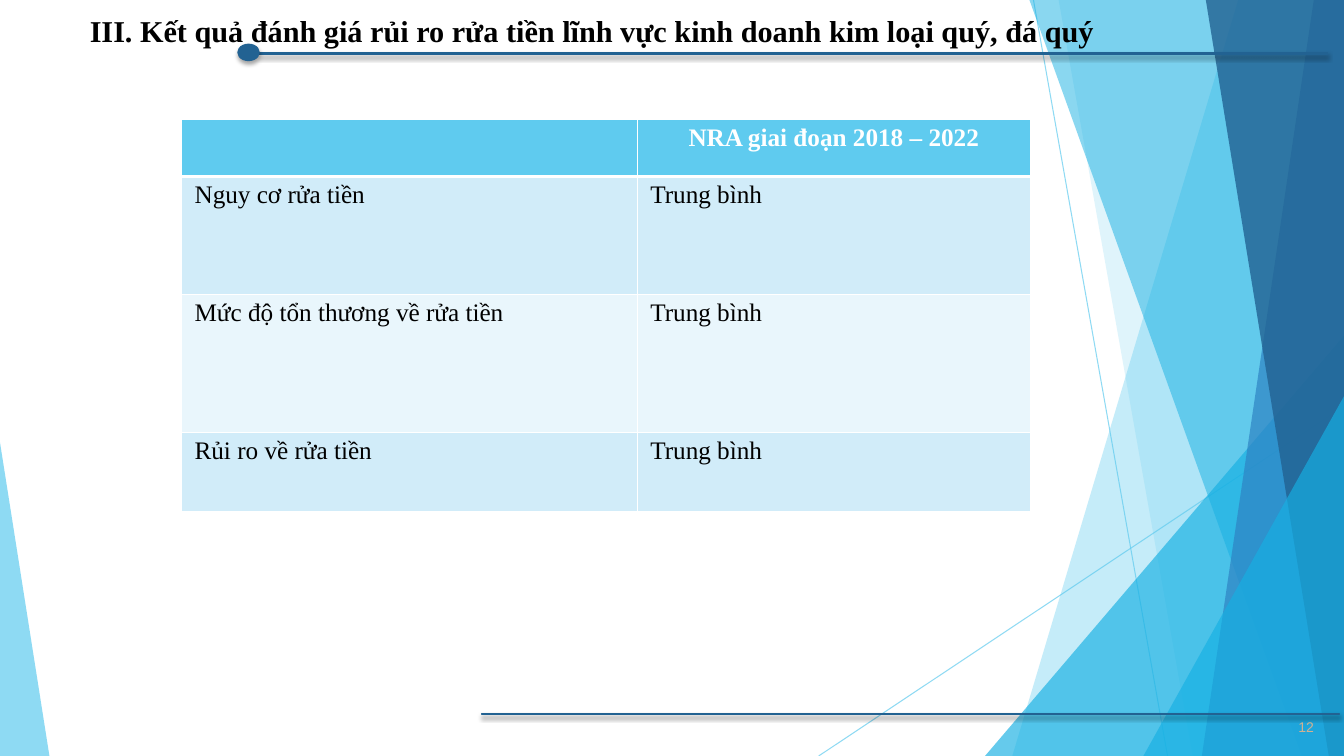
from lxml.etree import SubElement
from pptx import Presentation
from pptx.dml.color import RGBColor
from pptx.enum.shapes import MSO_CONNECTOR, MSO_SHAPE
from pptx.enum.text import MSO_ANCHOR, MSO_AUTO_SIZE, PP_ALIGN
from pptx.oxml import parse_xml
from pptx.oxml.ns import nsdecls, qn
from pptx.util import Inches, Pt

HUES = {"sky": "5FCBEF", "cyan": "16B0E3", "blue": "2E83C3", "navy": "226292",
        "white": "FFFFFF", "black": "000000", "tan": "D2B191",
        "odd": "D1ECF9", "even": "E9F6FC"}
SERIF = "Times New Roman"
ROWS = [("", "NRA giai đoạn 2018 – 2022"),
        ("Nguy cơ rửa tiền", "Trung bình"),
        ("Mức độ tổn thương về rửa tiền", "Trung bình"),
        ("Rủi ro về rửa tiền", "Trung bình")]


def tint(fill, hue, alpha=100):
    """Give a fill a solid colour with an opacity in percent."""
    fill.solid()
    fill.fore_color.rgb = RGBColor.from_string(HUES[hue])
    if alpha < 100:
        color = fill._xPr.find(qn("a:solidFill"))[0]
        SubElement(color, qn("a:alpha"), val=str(alpha * 1000))


def write(para, text, size, hue, face=SERIF, bold=False):
    """Add one formatted run to a paragraph."""
    run = para.add_run()
    run.text = text
    run.font.size, run.font.name, run.font.bold = Pt(size), face, bold
    run.font.color.rgb = RGBColor.from_string(HUES[hue])


def ray(slide, start, end):
    """Draw a thin translucent line."""
    line = slide.shapes.add_connector(
        MSO_CONNECTOR.STRAIGHT, *map(Inches, start + end))
    tint(line.line.fill, "sky", 70)
    line.line.width = Pt(0.75)
    SubElement(line._element.spPr, qn("a:effectLst"))


def sheet(slide, right, top, high, head, foot, hue, alpha):
    """Draw a slanted sheet that fills up to the right edge."""
    points = [(Inches(a), Inches(b)) for a, b in (
        (right - head, top), (right, top),
        (right, top + high), (right - foot, top + high))]
    pen = slide.shapes.build_freeform(*points[0])
    pen.add_line_segments(points[1:], close=True)
    shape = pen.convert_to_shape()
    shape.shadow.inherit = False
    tint(shape.fill, hue, alpha)
    shape.line.fill.background()


def wedge(slide, left, base, wide, high, peak, hue, alpha):
    """Draw a right triangle that stands on the base."""
    shape = slide.shapes.add_shape(
        MSO_SHAPE.ISOSCELES_TRIANGLE,
        *map(Inches, (left, base - high, wide, high)))
    shape.adjustments[0] = peak
    shape.shadow.inherit = False
    tint(shape.fill, hue, alpha)
    shape.line.fill.background()


def facets(slide, left, top, wide, high):
    """Draw the layered facets along both edges of the box."""
    right, base = left + wide, top + high
    ray(slide, (right - 3.08, top), (right - 1.75, base))
    ray(slide, (right, top + 4.03), (right - 5.21, base))
    for form, first, second, hue, alpha in (
            ("sheet", 1.05, 3.29, "sky", 36),
            ("sheet", 2.83, 1.5, "sky", 20),
            ("wedge", 3.56, 4.17, "cyan", 66),
            ("sheet", 3.12, 0.42, "cyan", 50),
            ("sheet", 0.3, 1.41, "blue", 70),
            ("sheet", 1.37, 0.15, "navy", 80),
            ("wedge", 1.99, 3.57, "cyan", 66)):
        if form == "sheet":
            sheet(slide, right, top, high, first, second, hue, alpha)
        else:
            wedge(slide, right - first, base, first, second, 1, hue, alpha)
    wedge(slide, left, base, 0.49, 3.11, 0, "sky", 70)


def rule(slide, kind, *box):
    """Draw a navy shape with a soft shadow below it."""
    shape = slide.shapes.add_shape(kind, *map(Inches, box))
    tint(shape.fill, "navy")
    tint(shape.line.fill, "navy")
    shape.line.width = Pt(1)
    shape.shadow.inherit = False
    glow = SubElement(
        shape._element.spPr.find(qn("a:effectLst")), qn("a:outerShdw"),
        blurRad=str(Pt(3)), dist=str(Pt(2)), dir="5400000", rotWithShape="0")
    color = SubElement(glow, qn("a:srgbClr"), val=HUES["black"])
    SubElement(color, qn("a:alpha"), val="35000")


def header(slide, left, top, wide, high):
    """Place the title and the dotted rule under it."""
    rule(slide, MSO_SHAPE.RECTANGLE, left + 1.78, top + 0.46, 10.6, 0.02)
    rule(slide, MSO_SHAPE.OVAL, left + 1.57, top + 0.38, 0.21, 0.16)
    title = slide.shapes.title
    title.left, title.top = Inches(left), Inches(top)
    title.width, title.height = Inches(wide), Inches(high)
    slide.shapes._spTree.append(title._element)
    frame = title.text_frame
    frame.auto_size = MSO_AUTO_SIZE.NONE
    frame.vertical_anchor = MSO_ANCHOR.MIDDLE
    para = frame.paragraphs[0]
    para.alignment = PP_ALIGN.LEFT
    write(para, "III. Kết quả đánh giá rủi ro rửa tiền lĩnh vực "
          "kinh doanh kim loại quý, đá quý", 21.6, "black", bold=True)


def footer(slide, left, top, wide):
    """Place the bottom rule and the page number."""
    rule(slide, MSO_SHAPE.RECTANGLE, left, top, wide, 0.01)
    box = slide.shapes.add_textbox(
        *map(Inches, (left + 8, top, 0.55, 0.27)))
    box.text_frame.word_wrap = True
    write(box.text_frame.paragraphs[0], "12", 10, "tan", "Arial")


def edge(cell, row):
    """Give a cell white borders, thick under the header."""
    sides = {"lnL": 1, "lnR": 1, "lnT": 3 if row == 1 else 1,
             "lnB": 3 if row == 0 else 1}
    props = cell._tc.get_or_add_tcPr()
    for place, (side, width) in enumerate(sides.items()):
        props.insert(place, parse_xml(
            f'<a:{side} {nsdecls("a")} w="{Pt(width)}"><a:solidFill>'
            f'<a:srgbClr val="{HUES["white"]}"/></a:solidFill></a:{side}>'))


def ratings(slide, left, top, wide, high):
    """Build the table of risk ratings."""
    table = slide.shapes.add_table(
        len(ROWS), 2, *map(Inches, (left, top, wide, high))).table
    for col, width in zip(table.columns, (4.52, wide - 4.52)):
        col.width = Inches(width)
    for row, height in zip(table.rows, (0.57, 1.17, 1.37, high - 3.11)):
        row.height = Inches(height)
    for row, texts in enumerate(ROWS):
        head = row == 0
        for col, text in enumerate(texts):
            cell = table.cell(row, col)
            cell.margin_left = cell.margin_right = Inches(0.13)
            tint(cell.fill, "sky" if head else "odd" if row % 2 else "even")
            edge(cell, row)
            if text:
                para = cell.text_frame.paragraphs[0]
                para.alignment = PP_ALIGN.CENTER if head else PP_ALIGN.LEFT
                write(para, text, 18, "white" if head else "black", bold=head)


def main():
    """Build and save the slide."""
    deck = Presentation()
    deck.slide_width, deck.slide_height = Inches(13.33), Inches(7.5)
    slide = deck.slides.add_slide(deck.slide_layouts[5])
    facets(slide, 0, 0, 13.33, 7.5)
    footer(slide, 4.78, 7.08, 8.5)
    header(slide, 0.79, 0.06, 11.5, 0.49)
    ratings(slide, 1.8, 1.18, 8.42, 3.9)
    deck.save("out.pptx")


if __name__ == "__main__":
    main()
